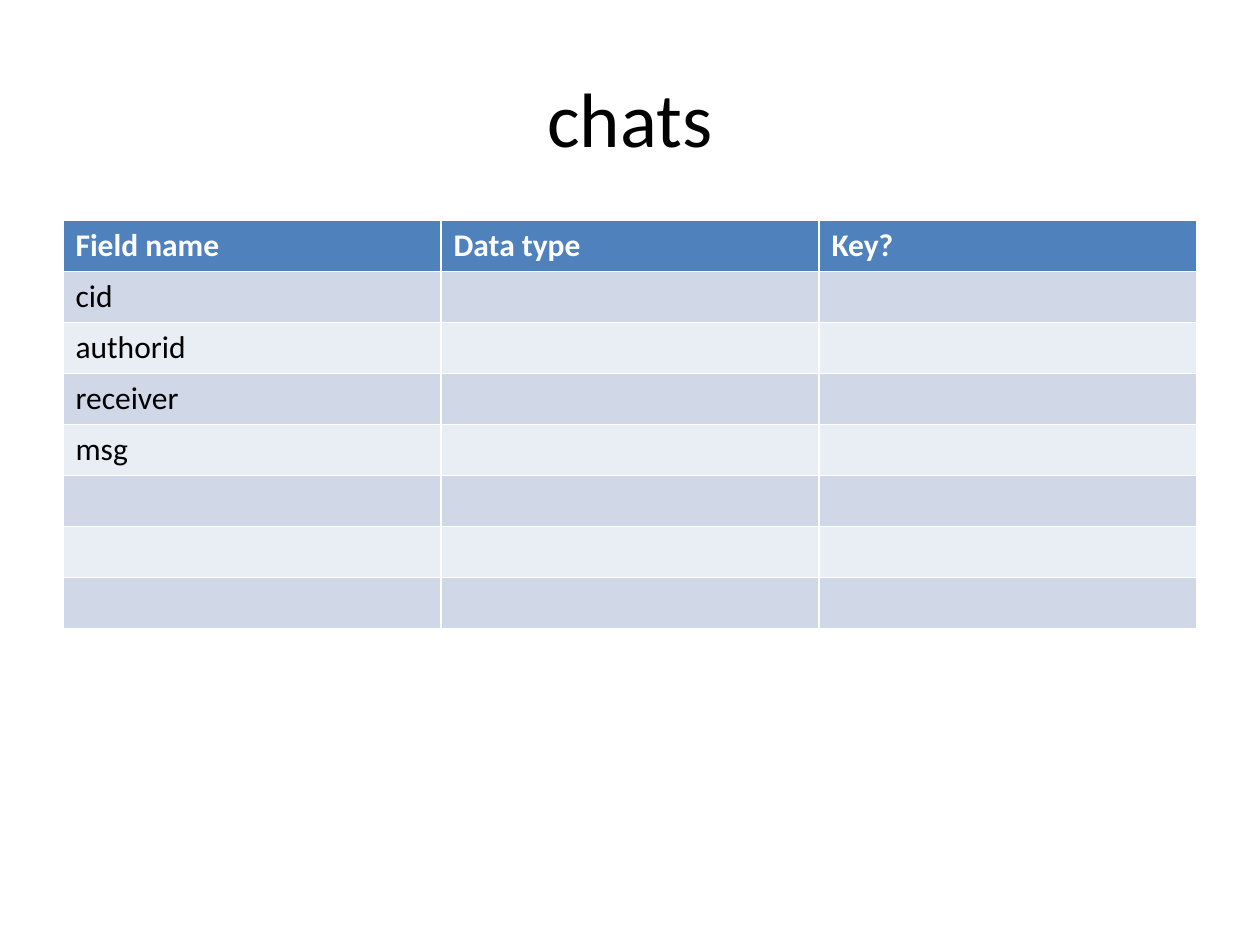
from pptx import Presentation
from pptx import util as u
from pptx.dml.color import RGBColor
from pptx.enum import text

BLACK = RGBColor(0x00, 0x00, 0x00)
WHITE = RGBColor(0xFF, 0xFF, 0xFF)
HEADER_BLUE = RGBColor(0x4F, 0x81, 0xBD)
BANDS = (RGBColor(0xE9, 0xED, 0xF4), RGBColor(0xD0, 0xD8, 0xE8))

TITLE_FONT = {"name": "Calibri", "size": u.Pt(44), "bold": False}
HEADER_FONT = {"name": "Calibri", "size": u.Pt(18), "bold": True}
BODY_FONT = {**HEADER_FONT, "bold": False}

HEADINGS = ["Field name", "Data type", "Key?"]
FIELDS = ["cid", "authorid", "receiver", "msg"]
ROW_COUNT = 8


def write(paragraph, words, font_format, color):
    run = paragraph.add_run()
    run.text = words
    for attribute, value in font_format.items():
        setattr(run.font, attribute, value)
    run.font.color.rgb = color


def add_title(slide, words):
    title = slide.shapes.add_textbox(
        u.Inches(0.5), u.Inches(0.3), u.Inches(9), u.Inches(1.25)
    ).text_frame
    title.word_wrap = True
    title.vertical_anchor = text.MSO_ANCHOR.MIDDLE
    heading = title.paragraphs[0]
    heading.alignment = text.PP_ALIGN.CENTER
    write(heading, words, TITLE_FONT, BLACK)


def add_field_table(slide):
    fields = slide.shapes.add_table(
        ROW_COUNT, len(HEADINGS),
        u.Inches(0.5), u.Inches(1.75), u.Inches(9), u.Inches(3.24),
    ).table
    for row_index, row in enumerate(fields.rows):
        for cell in row.cells:
            cell.fill.solid()
            cell.fill.fore_color.rgb = BANDS[row_index % 2] if row_index else HEADER_BLUE
    for column, heading in enumerate(HEADINGS):
        write(fields.cell(0, column).text_frame.paragraphs[0], heading, HEADER_FONT, WHITE)
    for row_index, field in enumerate(FIELDS, start=1):
        write(fields.cell(row_index, 0).text_frame.paragraphs[0], field, BODY_FONT, BLACK)


def main():
    deck = Presentation()
    deck.slide_width = u.Inches(10)
    deck.slide_height = u.Inches(7.5)
    slide = deck.slides.add_slide(deck.slide_layouts[6])
    add_title(slide, "chats")
    add_field_table(slide)
    deck.save("out.pptx")


if __name__ == "__main__":
    main()
